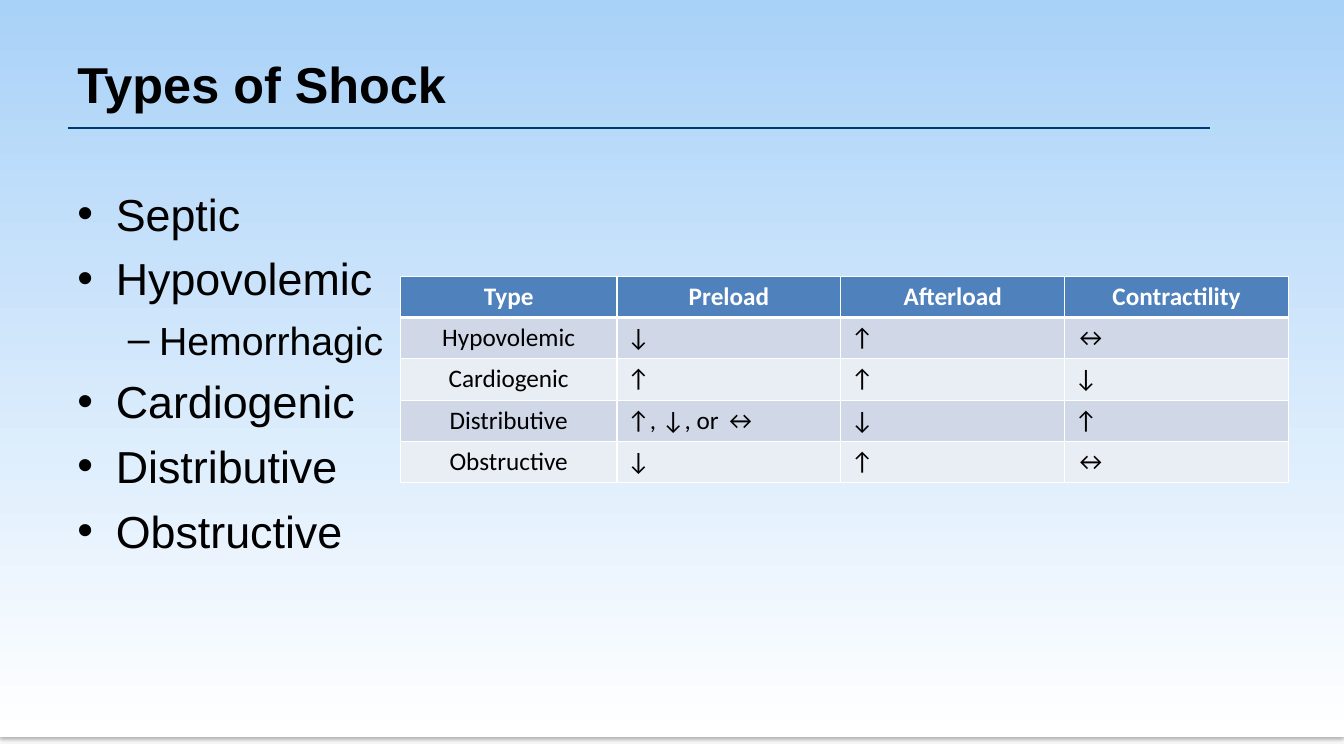
import dataclasses

import lxml.etree
import pptx
import pptx.dml.color
import pptx.enum.shapes
import pptx.enum.text
import pptx.oxml.ns
import pptx.slide
import pptx.table
import pptx.text.text
import pptx.util

Inches = pptx.util.Inches
Pt = pptx.util.Pt
RGBColor = pptx.dml.color.RGBColor
qn = pptx.oxml.ns.qn
CENTER = pptx.enum.text.PP_ALIGN.CENTER
LEFT = pptx.enum.text.PP_ALIGN.LEFT
MIDDLE = pptx.enum.text.MSO_ANCHOR.MIDDLE

BLACK = RGBColor(0x00, 0x00, 0x00)
WHITE = RGBColor(0xFF, 0xFF, 0xFF)
SKY = RGBColor(0xA9, 0xD2, 0xF8)
NAVY = RGBColor(0x00, 0x38, 0x73)
HEAD = RGBColor(0x4F, 0x81, 0xBD)
BANDS = (RGBColor(0xD0, 0xD8, 0xE8), RGBColor(0xE9, 0xED, 0xF4))


@dataclasses.dataclass(frozen=True)
class Level:
    size: int
    mark: str
    left: float
    hang: float


@dataclasses.dataclass(frozen=True)
class Item:
    text: str
    level: int = 0


LEVELS = (Level(32, "•", 0.38, 0.38), Level(28, "–", 0.81, 0.31))
ITEMS = (
    Item("Septic"),
    Item("Hypovolemic"),
    Item("Hemorrhagic", 1),
    Item("Cardiogenic"),
    Item("Distributive"),
    Item("Obstructive"),
)
ROWS = (
    ("Type", "Preload", "Afterload", "Contractility"),
    ("Hypovolemic", "↓", "↑", "↔"),
    ("Cardiogenic", "↑", "↑", "↓"),
    ("Distributive", "↑, ↓, or ↔", "↓", "↑"),
    ("Obstructive", "↓", "↑", "↔"),
)
WIDTHS = (2.15, 2.22, 2.22, 2.22)
HEIGHT = 0.41


def write(
    para: pptx.text.text._Paragraph,
    text: str,
    *,
    size: int,
    font: str = "Arial",
    color: RGBColor = BLACK,
    bold: bool = False,
    align: pptx.enum.text.PP_ALIGN = LEFT,
) -> None:
    para.alignment = align
    run = para.add_run()
    run.text = text
    run.font.size = Pt(size)
    run.font.name = font
    run.font.bold = bold
    run.font.color.rgb = color


def add_frame(
    slide: pptx.slide.Slide, top: float, height: float
) -> pptx.text.text.TextFrame:
    box = slide.shapes.add_textbox(
        Inches(0.67), Inches(top), Inches(12), Inches(height)
    )
    box.text_frame.word_wrap = True
    return box.text_frame


def add_back(slide: pptx.slide.Slide) -> None:
    """Draw the shaded panel and the rule below the title."""
    panel = slide.shapes.add_shape(
        pptx.enum.shapes.MSO_SHAPE.RECTANGLE, 0, 0, Inches(13.33), Inches(7.31)
    )
    panel.line.fill.background()
    panel.fill.gradient()
    panel.fill.gradient_angle = 270
    for stop, color, place in zip(panel.fill.gradient_stops, (SKY, WHITE), (0, 1)):
        stop.color.rgb = color
        stop.position = place
    panel.shadow.inherit = False
    effects = panel._element.spPr.find(qn("a:effectLst"))
    shade = lxml.etree.SubElement(
        effects, qn("a:outerShdw"),
        blurRad=str(Pt(3.1)), dist=str(Pt(1.8)), dir="5400000", rotWithShape="0",
    )
    tone = lxml.etree.SubElement(shade, qn("a:srgbClr"), val=str(BLACK))
    lxml.etree.SubElement(tone, qn("a:alpha"), val="35000")

    rule = slide.shapes.add_connector(
        pptx.enum.shapes.MSO_CONNECTOR.STRAIGHT,
        Inches(0.67), Inches(1.27), Inches(12), Inches(1.27),
    )
    rule.line.color.rgb = NAVY
    rule.line.width = Pt(2)
    lxml.etree.SubElement(rule._element.spPr, qn("a:effectLst"))


def add_list(slide: pptx.slide.Slide) -> None:
    frame = add_frame(slide, 1.75, 4.45)
    frame.margin_top = Inches(0.1)
    for index, item in enumerate(ITEMS):
        para = frame.add_paragraph() if index else frame.paragraphs[0]
        level = LEVELS[item.level]
        para.level = item.level
        if index:
            para.space_before = Pt(7.8)
        props = para._p.get_or_add_pPr()
        props.set("marL", str(Inches(level.left)))
        props.set("indent", str(-Inches(level.hang)))
        lxml.etree.SubElement(props, qn("a:buFont"), typeface="Arial")
        lxml.etree.SubElement(props, qn("a:buChar"), char=level.mark)
        write(para, item.text, size=level.size)


def add_edge(cell: pptx.table._Cell, side: str, width: int) -> None:
    props = cell._tc.get_or_add_tcPr()
    edge = lxml.etree.SubElement(props, qn(f"a:ln{side}"), w=str(Pt(width)))
    fill = lxml.etree.SubElement(edge, qn("a:solidFill"))
    lxml.etree.SubElement(fill, qn("a:srgbClr"), val=str(WHITE))


def add_grid(slide: pptx.slide.Slide) -> None:
    """Draw the table of shock types."""
    grid = slide.shapes.add_table(
        len(ROWS), len(WIDTHS), Inches(3.97), Inches(2.74),
        Inches(sum(WIDTHS)), Inches(HEIGHT * len(ROWS)),
    ).table
    for column, width in zip(grid.columns, WIDTHS):
        column.width = Inches(width)
    for r, texts in enumerate(ROWS):
        grid.rows[r].height = Inches(HEIGHT)
        head = r == 0
        for c, text in enumerate(texts):
            cell = grid.cell(r, c)
            for side in "LRTB":
                thick = (r, side) in ((0, "B"), (1, "T"))
                add_edge(cell, side, 3 if thick else 1)
            cell.fill.solid()
            cell.fill.fore_color.rgb = HEAD if head else BANDS[(r - 1) % 2]
            write(
                cell.text_frame.paragraphs[0], text, size=18, font="Calibri",
                color=WHITE if head else BLACK, bold=head,
                align=CENTER if head or c == 0 else LEFT,
            )


def main() -> None:
    deck = pptx.Presentation()
    deck.slide_width = Inches(13.33)
    deck.slide_height = Inches(7.5)
    slide = deck.slides.add_slide(deck.slide_layouts[6])
    add_back(slide)
    title = add_frame(slide, 0.2, 1.25)
    title.vertical_anchor = MIDDLE
    write(title.paragraphs[0], "Types of Shock", size=36, bold=True)
    add_list(slide)
    add_grid(slide)
    deck.save("out.pptx")


if __name__ == "__main__":
    main()
